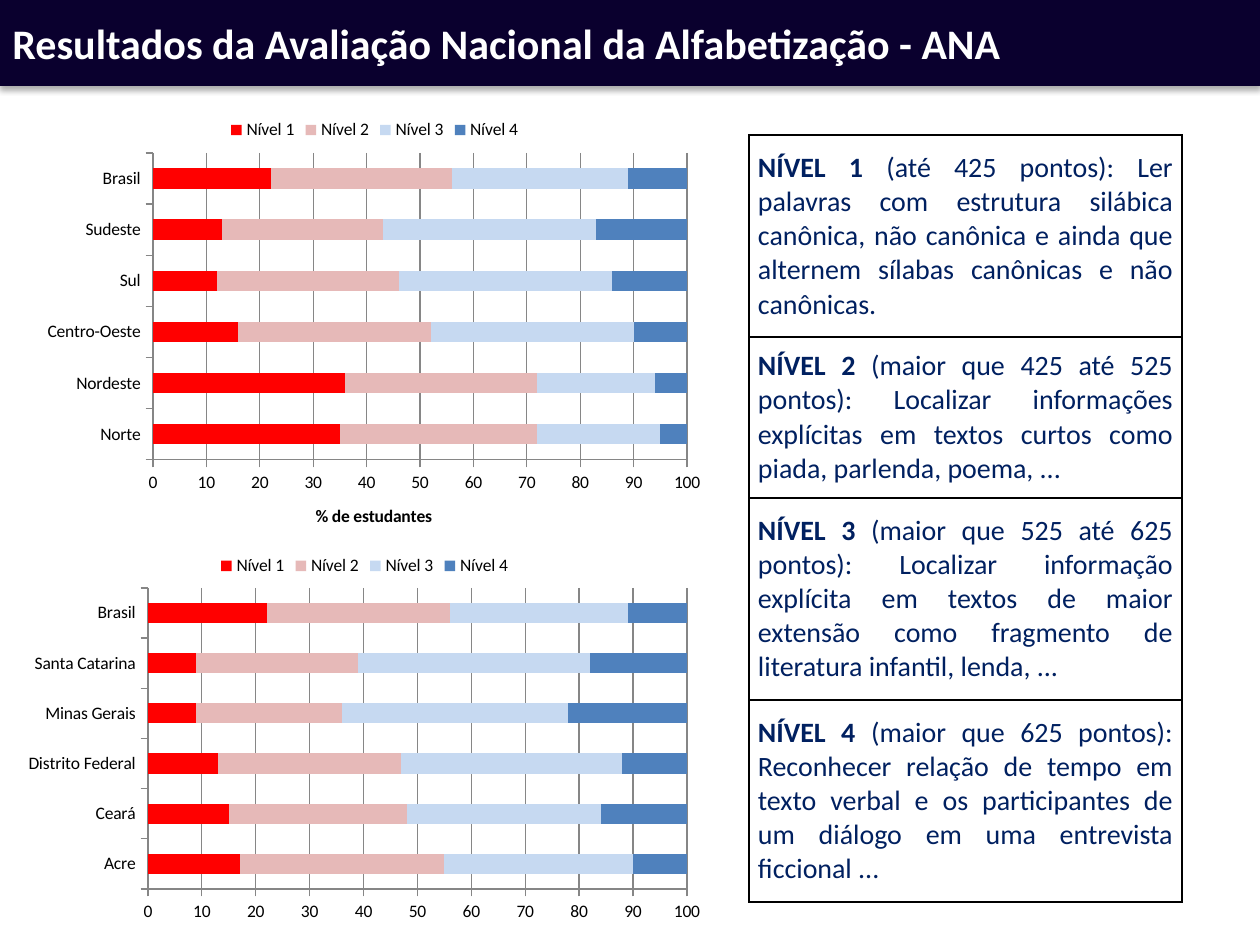
"""Build the slide with the results of the national literacy assessment."""
from lxml import etree
from pptx import Presentation
from pptx import util as u
from pptx.chart import data as chart_data
from pptx.dml.color import RGBColor
from pptx.enum import chart as ce
from pptx.enum import shapes, text
from pptx.oxml import parse_xml
from pptx.oxml.ns import nsdecls, qn

FONT = "Calibri"
TITLE = "Resultados da Avaliação Nacional da Alfabetização - ANA"
LEVEL_COLORS = ["FF0000", "E6B9B8", "C6D9F1", "4F81BD"]
CHARTS = [
    {
        "box": (35, 106, 679, 447),
        "plot": (153, 153, 534, 307),
        "axis_title": "% de estudantes",
        "rows": [
            ("Norte", 35, 37, 23, 5),
            ("Nordeste", 36, 36, 22, 6),
            ("Centro-Oeste", 16, 36, 38, 10),
            ("Sul", 12, 34, 40, 14),
            ("Sudeste", 13, 30, 40, 17),
            ("Brasil", 22, 34, 33, 11),
        ],
    },
    {
        "box": (15, 542, 699, 388),
        "plot": (148, 588, 539, 301),
        "axis_title": None,
        "rows": [
            ("Acre", 17, 38, 35, 10),
            ("Ceará", 15, 33, 36, 16),
            ("Distrito Federal", 13, 34, 41, 12),
            ("Minas Gerais", 9, 27, 42, 22),
            ("Santa Catarina", 9, 30, 43, 18),
            ("Brasil", 22, 34, 33, 11),
        ],
    },
]
LEVELS = [
    (202, "NÍVEL 1", " (até 425 pontos): Ler palavras com estrutura silábica canônica, "
     "não canônica e ainda que alternem sílabas canônicas e não canônicas."),
    (161, "NÍVEL 2", " (maior que 425 até 525 pontos): Localizar informações explícitas "
     "em textos curtos como piada, parlenda, poema, ..."),
    (202, "NÍVEL 3", " (maior que 525 até 625 pontos): Localizar informação explícita em "
     "textos de maior extensão como fragmento de literatura infantil, lenda, ..."),
    (202, "NÍVEL 4", " (maior que 625 pontos): Reconhecer relação de tempo em texto verbal "
     "e os participantes de um diálogo em uma entrevista ficcional ..."),
]


def px(*values):
    return [u.Emu(round(value * 914400 / 126)) for value in values]


def color(value):
    return RGBColor.from_string(value)


def style_font(font, size, value, bold=False):
    font.name, font.size, font.bold = FONT, u.Pt(size), bold
    font.color.rgb = color(value)


def place_plot(chart, box, plot):
    left, top, width, height = box
    fractions = {
        "x": (plot[0] - left) / width, "y": (plot[1] - top) / height,
        "w": plot[2] / width, "h": plot[3] / height,
    }
    area = chart._chartSpace.find(".//" + qn("c:plotArea"))
    for old in area.findall(qn("c:layout")):
        area.remove(old)
    layout = etree.Element(qn("c:layout"))
    manual = etree.SubElement(layout, qn("c:manualLayout"))
    settings = {"layoutTarget": "inner", "xMode": "edge", "yMode": "edge"}
    settings.update({key: f"{value:.4f}" for key, value in fractions.items()})
    for tag, value in settings.items():
        etree.SubElement(manual, qn("c:" + tag)).set("val", value)
    area.insert(0, layout)


def add_level_chart(slide, box, plot, axis_title, rows):
    names, *levels = zip(*rows)
    data = chart_data.CategoryChartData()
    data.categories = names
    for number, values in enumerate(levels, 1):
        data.add_series(f"Nível {number}", values)
    chart = slide.shapes.add_chart(ce.XL_CHART_TYPE.BAR_STACKED, *px(*box), data).chart
    style_font(chart.font, 10, "000000")
    chart.has_title = False
    chart.has_legend = True
    chart.legend.position = ce.XL_LEGEND_POSITION.TOP
    chart.legend.include_in_layout = False
    bars = chart.plots[0]
    bars.gap_width, bars.overlap, bars.vary_by_categories = 150, 100, False
    for series, value in zip(bars.series, LEVEL_COLORS):
        series.format.fill.solid()
        series.format.fill.fore_color.rgb = color(value)
    axis = chart.value_axis
    axis.minimum_scale, axis.maximum_scale, axis.major_unit = 0, 100, 10
    axis.has_major_gridlines = True
    for line in (axis.format.line, axis.major_gridlines.format.line,
                 chart.category_axis.format.line):
        line.color.rgb = color("868686")
        line.width = u.Pt(0.75)
    for each in (axis, chart.category_axis):
        each.major_tick_mark = ce.XL_TICK_MARK.OUTSIDE
    if axis_title:
        frame = axis.axis_title.text_frame
        frame.text = axis_title
        style_font(frame.paragraphs[0].runs[0].font, 10, "000000", True)
    place_plot(chart, box, plot)


def add_borders(cell):
    properties = cell._tc.get_or_add_tcPr()
    for side in "LRTB":
        properties.append(parse_xml(
            f'<a:ln{side} {nsdecls("a")} w="12700"><a:solidFill>'
            f'<a:srgbClr val="000000"/></a:solidFill></a:ln{side}>'))


def add_level_table(slide):
    total = sum(height for height, *_ in LEVELS)
    table = slide.shapes.add_table(len(LEVELS), 1, *px(749, 135, 433, total)).table
    table.first_row = table.horz_banding = False
    for index, (height, name, description) in enumerate(LEVELS):
        table.rows[index].height = px(height)[0]
        cell = table.cell(index, 0)
        add_borders(cell)
        cell.fill.background()
        cell.vertical_anchor = text.MSO_ANCHOR.MIDDLE
        cell.margin_left = cell.margin_right = px(9)[0]
        cell.margin_top = cell.margin_bottom = 0
        paragraph = cell.text_frame.paragraphs[0]
        paragraph.alignment = text.PP_ALIGN.JUSTIFY
        paragraph.space_after = u.Pt(6)
        for words, bold in ((name, True), (description, False)):
            run = paragraph.add_run()
            run.text = words
            style_font(run.font, 16, "002060", bold)


def add_header(slide):
    shape = slide.shapes.add_shape(shapes.MSO_SHAPE.RECTANGLE, *px(0, 0, 1260, 86))
    shape.shadow.inherit = False
    shape.fill.solid()
    shape.fill.fore_color.rgb = color("0A002E")
    shape.line.fill.background()
    effects = shape._element.spPr.find(qn("a:effectLst"))
    effects.append(parse_xml(
        f'<a:outerShdw {nsdecls("a")} blurRad="44450" dist="27940" dir="5400000" '
        'algn="ctr" rotWithShape="0"><a:srgbClr val="000000"><a:alpha val="32000"/>'
        '</a:srgbClr></a:outerShdw>'))
    frame = shape.text_frame
    frame.text = TITLE
    frame.word_wrap = True
    frame.vertical_anchor = text.MSO_ANCHOR.MIDDLE
    paragraph = frame.paragraphs[0]
    paragraph.alignment = text.PP_ALIGN.LEFT
    style_font(paragraph.runs[0].font, 24, "FFFFFF", True)


def main():
    presentation = Presentation()
    presentation.slide_width, presentation.slide_height = px(1260, 945)
    slide = presentation.slides.add_slide(presentation.slide_layouts[6])
    for chart in CHARTS:
        add_level_chart(slide, **chart)
    add_level_table(slide)
    add_header(slide)
    presentation.save("out.pptx")


if __name__ == "__main__":
    main()
